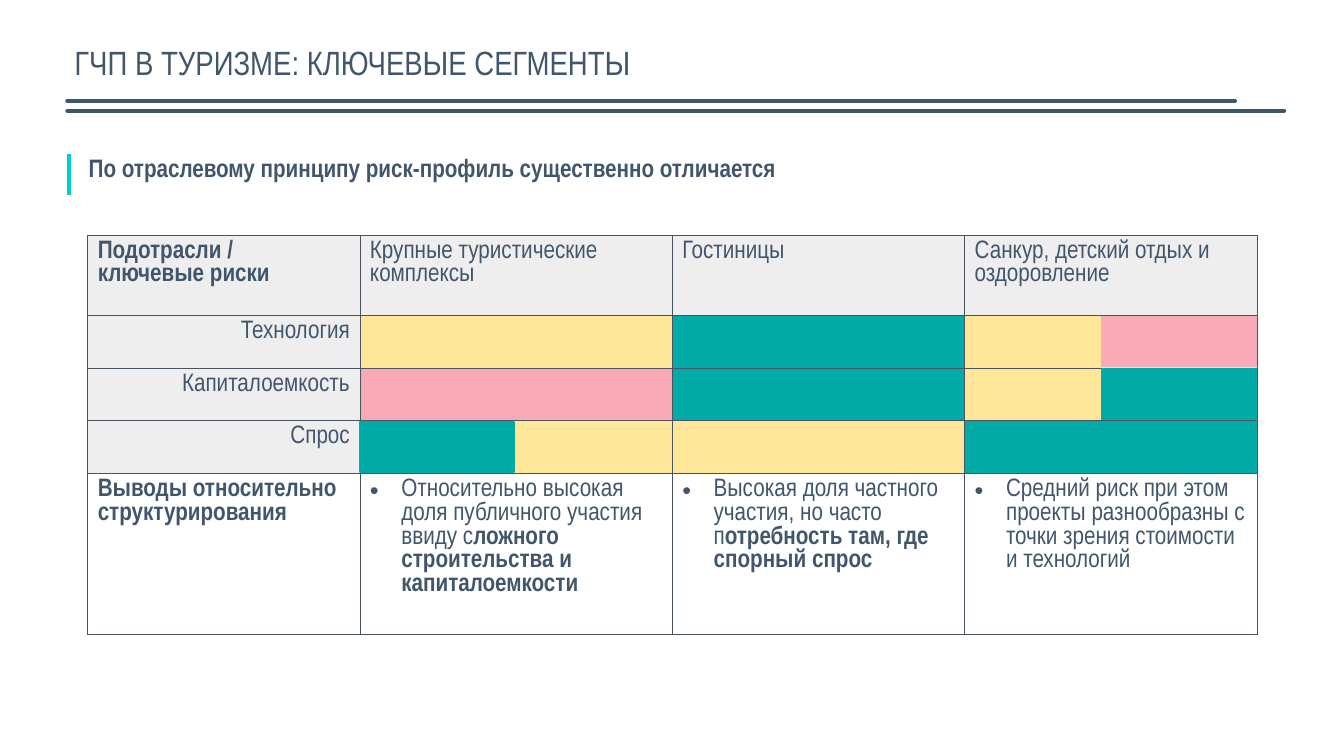
import pptx
import pptx.util
import pptx.dml.color
import pptx.enum.shapes
import pptx.enum.text
import pptx.oxml
import pptx.oxml.ns
from lxml import etree

Cm, Pt = pptx.util.Cm, pptx.util.Pt
ALIGN = pptx.enum.text.PP_ALIGN

TITLE = "ГЧП В ТУРИЗМЕ: КЛЮЧЕВЫЕ СЕГМЕНТЫ"
SUBTITLE = "По отраслевому принципу риск-профиль существенно отличается"
CORNER = "Подотрасли / \vключевые риски"
SEGMENTS = ["Крупные туристические комплексы", "Гостиницы",
            "Санкур, детский отдых и оздоровление"]
# Two levels in one cell split it into a left and a right part
RISKS = [
    ("Технология", ["medium", "low", "medium/high"]),
    ("Капиталоемкость", ["high", "low", "medium/low"]),
    ("Спрос", ["low/medium", "medium", "low"]),
]
CONCLUSION_HEAD = "Выводы относительно структурирования"
# Each conclusion: regular part, bold part
CONCLUSIONS = [
    ("Относительно высокая доля публичного участия ввиду с",
     "ложного строительства и капиталоемкости"),
    ("Высокая доля частного участия, но часто п",
     "отребность там, где спорный спрос"),
    ("Средний риск при этом проекты разнообразны с точки зрения "
     "стоимости и технологий", ""),
]

THEME = {
    "font": "Arial Narrow", "title": 24, "body": 18,
    "text": "41566D", "rule": "3C5765", "accent": "01CFCA",
    "border": "495460", "head": "EFEEEE",
    "low": "01ABA8", "medium": "FFE699", "high": "FAAAB7",
}

TABLE_LEFT, TABLE_TOP = 2.21, 5.92
COLUMNS = [6.86, 7.87, 7.37, 7.37]
ROWS = [2.02, 1.33, 1.33, 1.33, 3.26]
PATCH_WIDTH, PATCH_HEIGHT, PATCH_INSET = 3.89, 1.27, 0.03
RULES = [(1.7, 32.36, 2.79), (1.7, 31.12, 2.54)]


def color(name):
    return pptx.dml.color.RGBColor.from_string(THEME[name])


def write(frame, text, size="body", bold=False, bold_tail="", align=None,
          bullet=False, indent=0, spacing=None):
    paragraph = frame.paragraphs[0]
    if bullet or indent:
        properties = paragraph._p.get_or_add_pPr()
        properties.set("marL", str(Cm(indent)))
        properties.set("indent", str(-Cm(indent) if bullet else 0))
    if bullet:
        etree.SubElement(properties, pptx.oxml.ns.qn("a:buFont")).set("typeface", "Arial")
        etree.SubElement(properties, pptx.oxml.ns.qn("a:buChar")).set("char", "•")
    if align is not None:
        paragraph.alignment = align
    if spacing:
        paragraph.line_spacing = spacing
    for part, weight in ((text, bold), (bold_tail, True)):
        for number, line in enumerate(part.split("\v")):
            if number:
                paragraph.add_line_break()
            if line:
                run = paragraph.add_run()
                run.text = line
                run.font.name = THEME["font"]
                run.font.size = Pt(THEME[size])
                run.font.bold = weight
                run.font.color.rgb = color("text")


def set_borders(cell, sides, name, width):
    """Draw the given sides (letters of LRTB) and clear the others; call before filling."""
    for side in "LRTB":
        line = etree.SubElement(cell._tc.get_or_add_tcPr(), pptx.oxml.ns.qn(f"a:ln{side}"))
        if side in sides:
            line.set("w", str(Pt(width)))
            fill = etree.SubElement(line, pptx.oxml.ns.qn("a:solidFill"))
            etree.SubElement(fill, pptx.oxml.ns.qn("a:srgbClr")).set("val", THEME[name])
        else:
            etree.SubElement(line, pptx.oxml.ns.qn("a:noFill"))


def add_grid(slide, left, top, columns, rows, sides, border, width):
    grid = slide.shapes.add_table(len(rows), len(columns), Cm(left), Cm(top),
                                  Cm(sum(columns)), Cm(sum(rows))).table
    grid.first_row = grid.horz_banding = False
    for column, size in zip(grid.columns, columns):
        column.width = Cm(size)
    for row, size in zip(grid.rows, rows):
        row.height = Cm(size)
    for cell in grid.iter_cells():
        set_borders(cell, sides, border, width)
        cell.fill.background()
    return grid


def paint(target, name):
    target.fill.solid()
    target.fill.fore_color.rgb = color(name)


def add_patch(slide, row, column, level, at_right):
    left = TABLE_LEFT + sum(COLUMNS[:column])
    if at_right:
        left += COLUMNS[column] - PATCH_WIDTH - PATCH_INSET
    top = TABLE_TOP + sum(ROWS[:row]) + PATCH_INSET
    patch = slide.shapes.add_shape(pptx.enum.shapes.MSO_SHAPE.RECTANGLE, Cm(left), Cm(top),
                                   Cm(PATCH_WIDTH), Cm(PATCH_HEIGHT))
    patch.shadow.inherit = False
    paint(patch, level)
    patch.line.color.rgb = color(level)
    patch.line.width = Pt(1)


def add_rule(slide, start, end, y):
    rule = slide.shapes.add_connector(pptx.enum.shapes.MSO_CONNECTOR.STRAIGHT,
                                      Cm(start), Cm(y), Cm(end), Cm(y))
    rule.line.color.rgb = color("rule")
    rule.line.width = Pt(3)
    rule.line._get_or_add_ln().set("cap", "rnd")
    etree.SubElement(rule._element.spPr, pptx.oxml.ns.qn("a:effectLst"))


def add_risk_table(slide):
    table = add_grid(slide, TABLE_LEFT, TABLE_TOP, COLUMNS, ROWS, "LRTB", "border", 0.5)
    for column, heading in enumerate([CORNER] + SEGMENTS):
        write(table.cell(0, column).text_frame, heading, bold=column == 0)
        paint(table.cell(0, column), "head")
    for row, (risk, levels) in enumerate(RISKS, 1):
        write(table.cell(row, 0).text_frame, risk, align=ALIGN.RIGHT)
        paint(table.cell(row, 0), "head")
        for column, level in enumerate(levels, 1):
            first, _, second = level.partition("/")
            # The patch takes the low or high part, the cell keeps the medium one
            paint(table.cell(row, column), "medium" if second else first)
            if second:
                at_right = first == "medium"
                add_patch(slide, row, column, second if at_right else first, at_right)
    last = len(ROWS) - 1
    write(table.cell(last, 0).text_frame, CONCLUSION_HEAD, bold=True)
    for column, (regular, strong) in enumerate(CONCLUSIONS, 1):
        write(table.cell(last, column).text_frame, regular, bold_tail=strong,
              bullet=True, indent=0.79)


def main():
    deck = pptx.Presentation()
    deck.slide_width, deck.slide_height = Cm(33.87), Cm(19.05)
    slide = deck.slides.add_slide(deck.slide_layouts[6])
    for rule in RULES:
        add_rule(slide, *rule)
    title = slide.shapes.add_textbox(Cm(1.63), Cm(0), Cm(31.65), Cm(3.25)).text_frame
    title.word_wrap = True
    title.vertical_anchor = pptx.enum.text.MSO_ANCHOR.MIDDLE
    write(title, TITLE, size="title", spacing=0.9)
    add_risk_table(slide)
    subtitle = add_grid(slide, 1.73, 3.89, [28.27], [0.97], "L", "accent", 3)
    write(subtitle.cell(0, 0).text_frame, SUBTITLE, bold=True, indent=0.25)
    deck.save("out.pptx")


if __name__ == "__main__":
    main()
